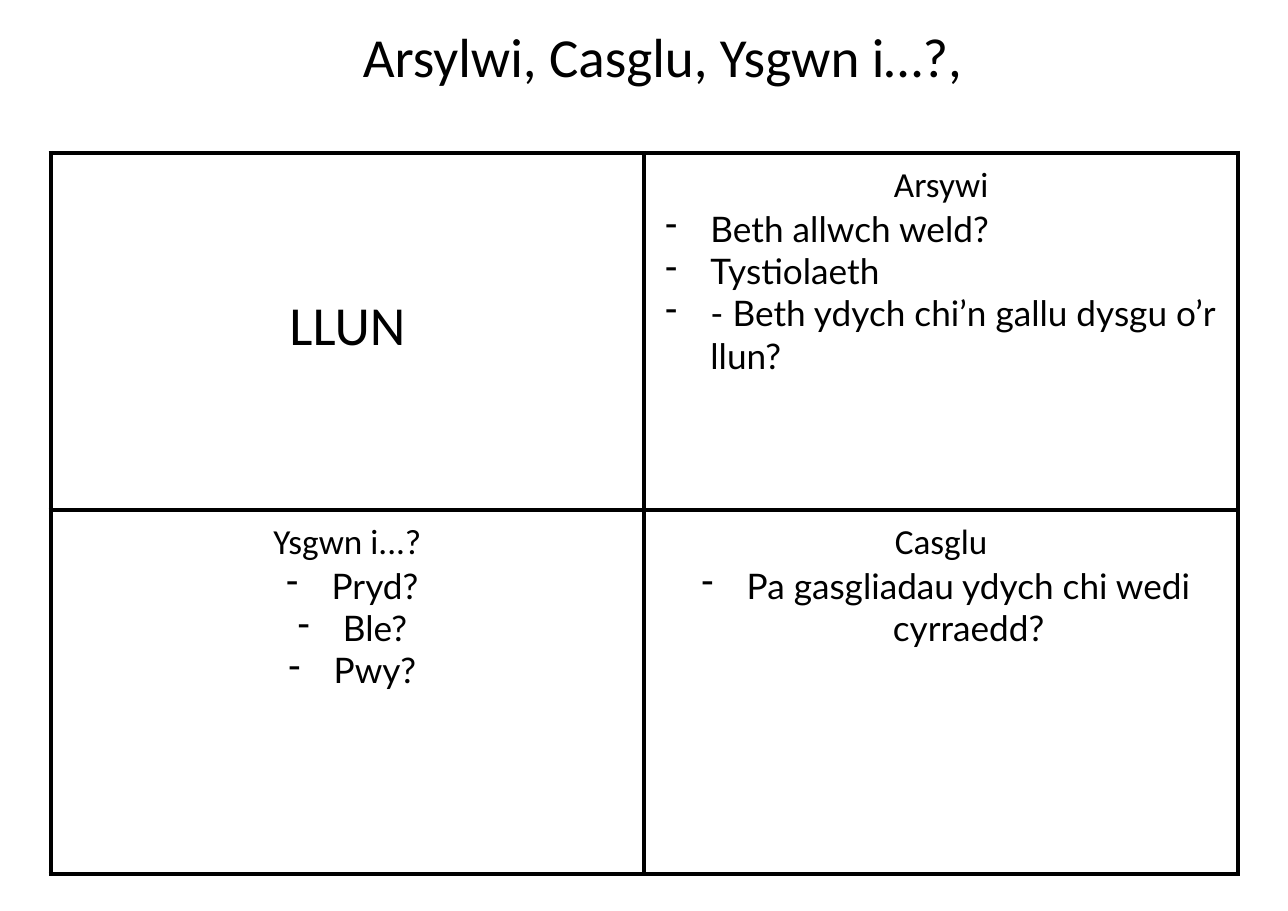
from dataclasses import dataclass

from lxml import etree
from pptx import Presentation
from pptx.dml.color import RGBColor
from pptx.enum.text import MSO_ANCHOR, PP_ALIGN
from pptx.oxml.ns import qn
from pptx.util import Pt

CENTER, LEFT = PP_ALIGN.CENTER, PP_ALIGN.LEFT
TOP, MIDDLE = MSO_ANCHOR.TOP, MSO_ANCHOR.MIDDLE
BLACK = "000000"
HEADING_FONT, PROMPT_FONT = "Calibri", "Lato"
LARGE, NORMAL = 36, 23
INSET = 7.2
BORDER_WIDTH = 3
COLUMN_WIDTH = 388
ROW_HEIGHTS = (233.3, 238.2)


@dataclass
class Quadrant:
    row: int
    column: int
    heading: str
    prompts: tuple[str, ...] = ()
    prompt_align: int = CENTER
    heading_size: int = NORMAL
    anchor: int = TOP
    bottom_inset: float = INSET


QUADRANTS = [
    Quadrant(0, 0, "LLUN", heading_size=LARGE, anchor=MIDDLE, bottom_inset=13),
    Quadrant(0, 1, "Arsywi",
             ("Beth allwch weld?", "Tystiolaeth",
              "- Beth ydych chi’n gallu dysgu o’r llun?"), LEFT),
    Quadrant(1, 0, "Ysgwn i...?", ("Pryd?", "Ble?", "Pwy?")),
    Quadrant(1, 1, "Casglu", ("Pa gasgliadau ydych chi wedi cyrraedd?",)),
]


def color(hex_value: str) -> RGBColor:
    return RGBColor.from_string(hex_value)


def add_solid_color(parent, tag: str) -> None:
    etree.SubElement(etree.SubElement(parent, qn(tag)), qn("a:srgbClr"), val=BLACK)


def format_text(paragraph, align: int, font_name: str, size: int) -> None:
    paragraph.alignment = align
    for run in paragraph.runs:
        run.font.name = font_name
        run.font.size = Pt(size)
        run.font.color.rgb = color(BLACK)


def add_dash(paragraph) -> None:
    properties = paragraph._p.get_or_add_pPr()
    properties.set("marL", str(Pt(36)))
    properties.set("indent", str(Pt(-29.5)))
    add_solid_color(properties, "a:buClr")
    etree.SubElement(properties, qn("a:buChar"), char="-")


def add_borders(cell) -> None:
    properties = cell._tc.get_or_add_tcPr()
    for side in ("a:lnL", "a:lnR", "a:lnT", "a:lnB"):
        border = etree.SubElement(properties, qn(side), w=str(Pt(BORDER_WIDTH)))
        add_solid_color(border, "a:solidFill")


def fill_quadrant(cell, quadrant: Quadrant) -> None:
    add_borders(cell)
    cell.fill.background()
    cell.margin_left = cell.margin_right = cell.margin_top = Pt(INSET)
    cell.margin_bottom = Pt(quadrant.bottom_inset)
    cell.vertical_anchor = quadrant.anchor
    heading = cell.text_frame.paragraphs[0]
    heading.text = quadrant.heading
    format_text(heading, CENTER, HEADING_FONT, quadrant.heading_size)
    for wording in quadrant.prompts:
        prompt = cell.text_frame.add_paragraph()
        prompt.text = wording
        add_dash(prompt)
        format_text(prompt, quadrant.prompt_align, PROMPT_FONT, NORMAL)


def add_title(slide, wording: str) -> None:
    title = slide.shapes.title
    title.left, title.top, title.width, title.height = Pt(24.5), Pt(5), Pt(817), Pt(62.6)
    frame = title.text_frame
    frame.text = wording
    frame.word_wrap = True
    frame.vertical_anchor = MIDDLE
    frame.margin_left = frame.margin_right = Pt(INSET)
    frame.margin_top = frame.margin_bottom = Pt(INSET)
    format_text(frame.paragraphs[0], CENTER, HEADING_FONT, LARGE)


def add_grid(slide) -> None:
    grid = slide.shapes.add_table(
        2, 2, Pt(33.1), Pt(100), Pt(2 * COLUMN_WIDTH), Pt(sum(ROW_HEIGHTS))).table
    grid.first_row = grid.horz_banding = False
    for column in grid.columns:
        column.width = Pt(COLUMN_WIDTH)
    for row, height in zip(grid.rows, ROW_HEIGHTS):
        row.height = Pt(height)
    for quadrant in QUADRANTS:
        fill_quadrant(grid.cell(quadrant.row, quadrant.column), quadrant)


def main() -> None:
    presentation = Presentation()
    presentation.slide_width, presentation.slide_height = Pt(841.7), Pt(595.4)
    slide = presentation.slides.add_slide(presentation.slide_layouts[5])
    add_title(slide, "Arsylwi, Casglu, Ysgwn i…?,")
    add_grid(slide)
    presentation.save("out.pptx")


if __name__ == "__main__":
    main()
